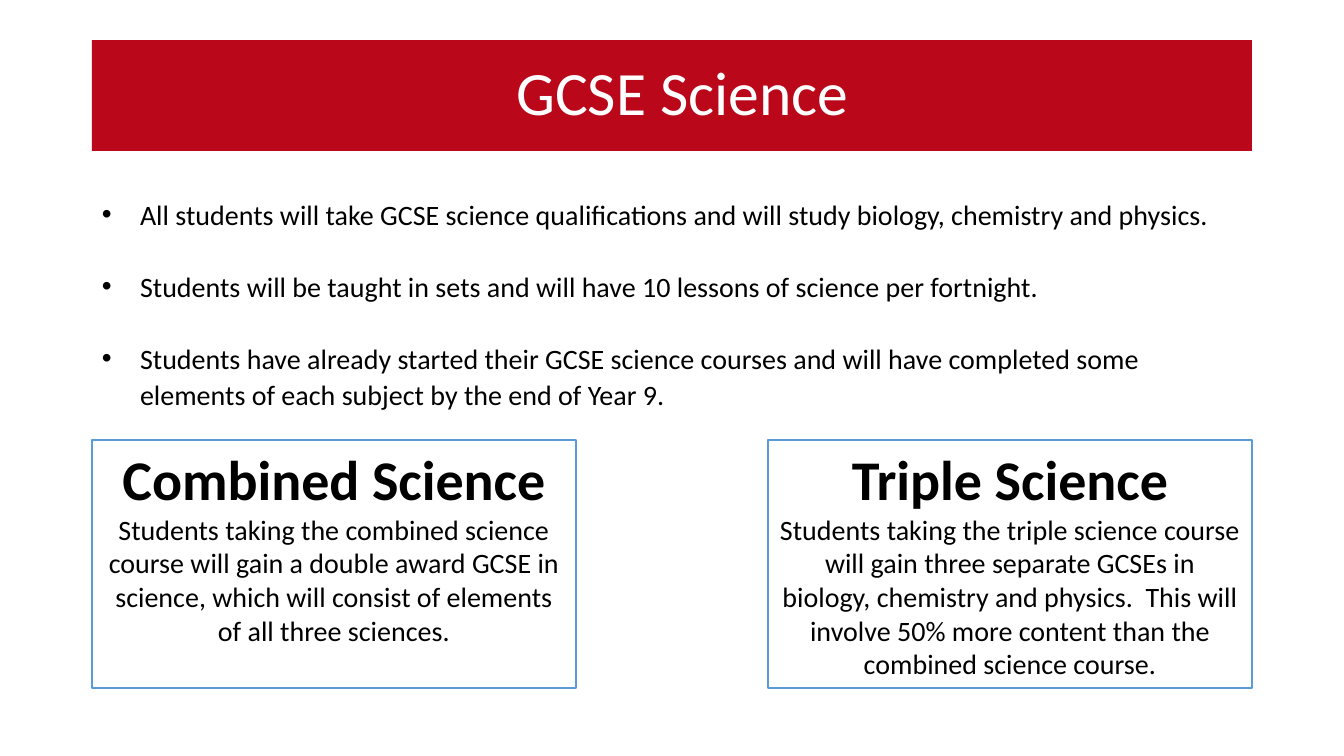
from lxml.etree import SubElement
from pptx import Presentation
from pptx.dml.color import RGBColor
from pptx.enum.shapes import MSO_SHAPE
from pptx.enum.text import MSO_ANCHOR, MSO_AUTO_SIZE, PP_ALIGN
from pptx.oxml.ns import qn
from pptx.util import Pt

TITLE = "GCSE Science"
POINTS = [
    "All students will take GCSE science qualifications and will study biology, chemistry and physics.",
    "Students will be taught in sets and will have 10 lessons of science per fortnight.",
    "Students have already started their GCSE science courses and will have completed "
    "some elements of each subject by the end of Year 9.",
]
COURSES = [
    ("Combined Science",
     "Students taking the combined science course will gain a double award GCSE in "
     "science, which will consist of elements of all three sciences."),
    ("Triple Science",
     "Students taking the triple science course will gain three separate GCSEs in "
     "biology, chemistry and physics.  This will involve 50% more content than the "
     "combined science course."),
]
RED, BLUE, BLACK, WHITE = "BA0719", "5B9BD5", "000000", "FFFFFF"
LEFT, WIDTH = 92, 1160
CARD_TOP, CARD_WIDTH, CARD_HEIGHT = 440, 484, 248
INDENT = 38


def px(n):
    return round(n * 914400 / 100.8)


def color(code):
    return RGBColor.from_string(code)


def place(shape, left, top, width, height):
    shape.left, shape.top = px(left), px(top)
    shape.width, shape.height = px(width), px(height)


def style(para, size, code, bold=False):
    for run in para.runs:
        font = run.font
        font.name, font.size, font.bold = "Calibri", Pt(size), bold
        font.color.rgb = color(code)


def setup(frame, anchor):
    frame.word_wrap = True
    frame.auto_size = MSO_AUTO_SIZE.NONE
    frame.vertical_anchor = anchor
    frame.margin_left = frame.margin_right = px(10)
    frame.margin_top = frame.margin_bottom = px(5)


def add_title(slide):
    title = slide.shapes.title
    place(title, LEFT, 40, WIDTH, 111)
    title.fill.solid()
    title.fill.fore_color.rgb = color(RED)
    frame = title.text_frame
    setup(frame, MSO_ANCHOR.MIDDLE)
    frame.margin_left = px(31)
    frame.text = TITLE
    para = frame.paragraphs[0]
    para.alignment, para.line_spacing = PP_ALIGN.CENTER, 0.9
    style(para, 44, WHITE)


def add_points(slide):
    body = slide.placeholders[1]
    place(body, LEFT, 190, WIDTH, 227)
    frame = body.text_frame
    setup(frame, MSO_ANCHOR.TOP)
    frame.text = "\n".join(POINTS)
    for i, para in enumerate(frame.paragraphs):
        para.line_spacing = 1.07
        para.space_before = Pt(25.7 if i else 0)
        para.space_after = Pt(0)
        props = para._p.get_or_add_pPr()
        props.set("marL", str(px(INDENT)))
        props.set("indent", str(-px(INDENT)))
        SubElement(props, qn("a:buFont"), typeface="Arial")
        SubElement(props, qn("a:buChar"), char="•")
        style(para, 20, BLACK)


def add_card(slide, left, name, detail):
    card = slide.shapes.add_shape(
        MSO_SHAPE.RECTANGLE, px(left), px(CARD_TOP), px(CARD_WIDTH), px(CARD_HEIGHT))
    card.shadow.inherit = False
    card.fill.background()
    card.line.color.rgb = color(BLUE)
    card.line.width = Pt(1)
    frame = card.text_frame
    setup(frame, MSO_ANCHOR.TOP)
    frame.text = f"{name}\n{detail}"
    head, text = frame.paragraphs
    head.alignment = text.alignment = PP_ALIGN.CENTER
    style(head, 40, BLACK, True)
    style(text, 20, BLACK)


def main():
    deck = Presentation()
    deck.slide_width, deck.slide_height = px(1344), px(756)
    slide = deck.slides.add_slide(deck.slide_layouts[1])
    add_title(slide)
    add_points(slide)
    step = WIDTH - CARD_WIDTH
    for i, (name, detail) in enumerate(COURSES):
        add_card(slide, LEFT + i * step, name, detail)
    deck.save("out.pptx")


if __name__ == "__main__":
    main()
